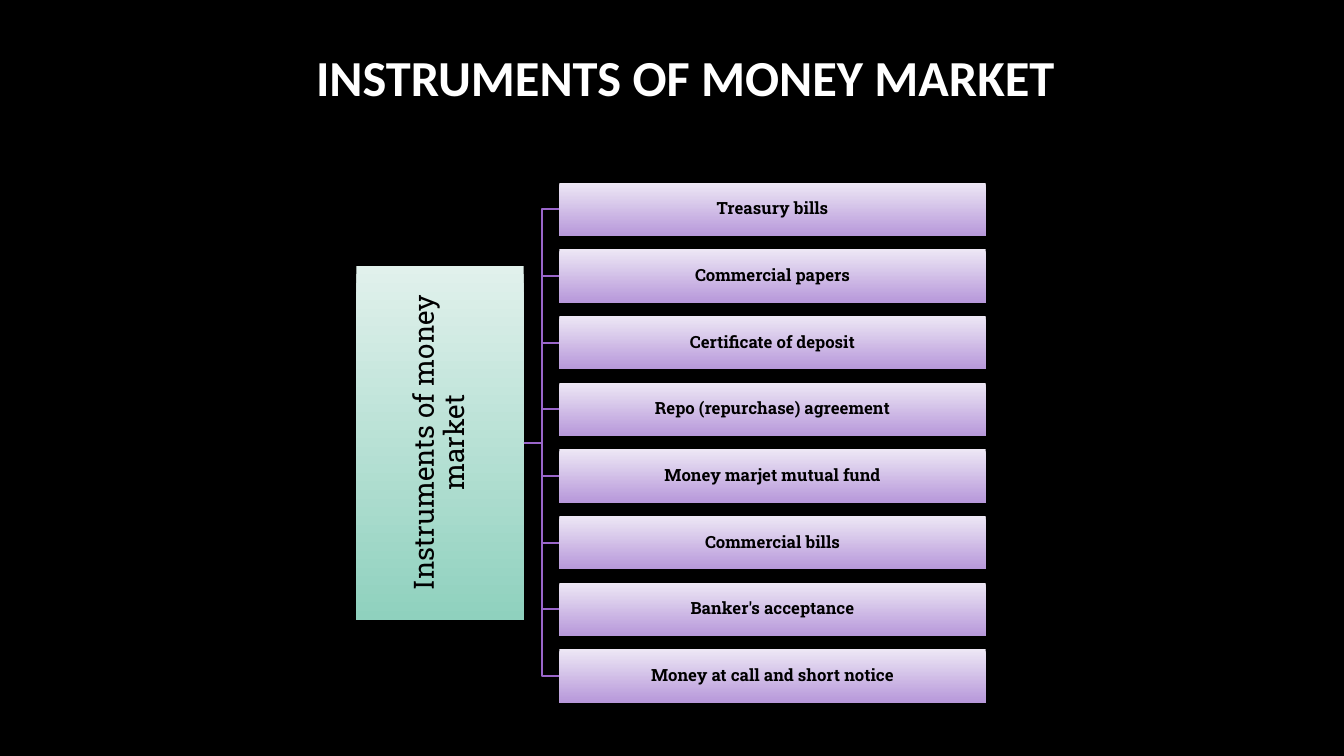
from lxml import etree
from pptx import Presentation
from pptx import util as u
from pptx.dml.color import RGBColor
from pptx.enum import shapes, text
from pptx.oxml.ns import qn

TITLE = "INSTRUMENTS OF MONEY MARKET"
ROOT = "Instruments of money market"
INSTRUMENTS = [
    "Treasury bills",
    "Commercial papers",
    "Certificate of deposit",
    "Repo (repurchase) agreement",
    "Money marjet mutual fund",
    "Commercial bills",
    "Banker's acceptance",
    "Money at call and short notice",
]

BLACK, WHITE, BRANCH = "000000", "FFFFFF", "9A66CA"
MINT = ("E1F1EC", "8FD1BE")
LILAC = ("EDE7F5", "B798DA")

# Lengths in centimetres
SLIDE_W, SLIDE_H = 33.87, 19.05
ROOT_W, ROOT_H = 4.22, 8.92
ITEM_LEFT, ITEM_TOP, ITEM_W, ITEM_H = 14.1, 4.6, 10.74, 1.35
PITCH, GAP = 1.68, 0.9


def rgb(value):
    return RGBColor.from_string(value)


def format_text(frame, size, font, color, bold):
    frame.word_wrap = True
    frame.auto_size = text.MSO_AUTO_SIZE.NONE
    frame.vertical_anchor = text.MSO_ANCHOR.MIDDLE
    paragraph = frame.paragraphs[0]
    paragraph.alignment = text.PP_ALIGN.CENTER
    paragraph.line_spacing = 0.9
    for run in paragraph.runs:
        run.font.size = u.Pt(size)
        run.font.name = font
        run.font.bold = bold
        run.font.color.rgb = rgb(color)


def add_box(slide, label, bounds, gradient, size, bold):
    """Add a rectangle shaded from top to bottom with a centred label."""
    box = slide.shapes.add_shape(shapes.MSO_SHAPE.RECTANGLE, *map(u.Cm, bounds))
    box.shadow.inherit = False
    box.line.fill.background()
    box.fill.gradient()
    box.fill.gradient_angle = 270
    for stop, color in zip(box.fill.gradient_stops, gradient):
        stop.color.rgb = rgb(color)
    frame = box.text_frame
    frame.margin_left = frame.margin_right = u.Cm(0.03)
    frame.margin_top = frame.margin_bottom = u.Cm(0.03)
    frame.text = label
    format_text(frame, size, "Roboto Slab", BLACK, bold)
    return box


def add_branch(slide, root, item):
    branch = slide.shapes.add_connector(shapes.MSO_CONNECTOR.ELBOW, 0, 0, 0, 0)
    branch.begin_connect(root, 3)
    branch.end_connect(item, 1)
    branch.line.color.rgb = rgb(BRANCH)
    branch.line.width = u.Pt(1.5)
    etree.SubElement(branch._element.spPr, qn("a:effectLst"))


def main():
    prs = Presentation()
    prs.slide_width, prs.slide_height = u.Cm(SLIDE_W), u.Cm(SLIDE_H)
    slide = prs.slides.add_slide(prs.slide_layouts[5])
    slide.background.fill.solid()
    slide.background.fill.fore_color.rgb = rgb(BLACK)

    title = slide.shapes.title
    title.left, title.top = u.Cm(2.9), u.Cm(0.64)
    title.width, title.height = u.Cm(28.75), u.Cm(2.74)
    title.text_frame.text = TITLE
    format_text(title.text_frame, 36, "Calibri", WHITE, True)

    stack_h = PITCH * (len(INSTRUMENTS) - 1) + ITEM_H
    root_bounds = (ITEM_LEFT - GAP - ROOT_W, ITEM_TOP + (stack_h - ROOT_H) / 2,
                   ROOT_W, ROOT_H)
    root = add_box(slide, ROOT, root_bounds, MINT, 20, False)
    root.text_frame._txBody.bodyPr.set("vert", "vert270")

    for row, instrument in enumerate(INSTRUMENTS):
        bounds = (ITEM_LEFT, ITEM_TOP + row * PITCH, ITEM_W, ITEM_H)
        item = add_box(slide, instrument, bounds, LILAC, 12, True)
        add_branch(slide, root, item)

    prs.save("out.pptx")


if __name__ == "__main__":
    main()
